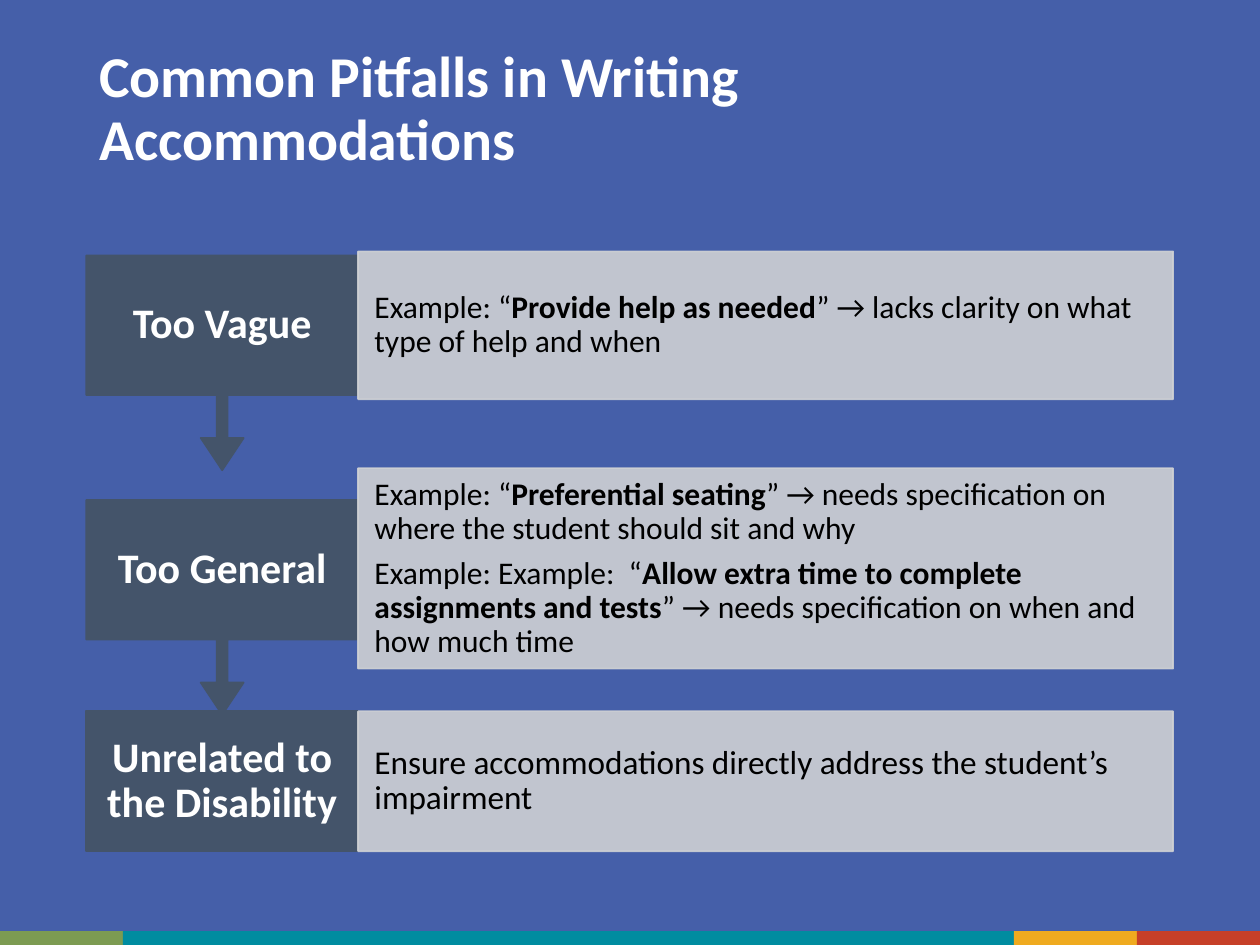
from lxml import etree
from pptx import Presentation
from pptx.dml.color import RGBColor
from pptx.enum.shapes import MSO_SHAPE as Kind
from pptx.enum.text import MSO_ANCHOR as Anchor, PP_ALIGN as Align
from pptx.oxml.ns import qn
from pptx.util import Cm, Pt

WHITE, BLACK, SLATE, GREY = "FFFFFF", "000000", "44546A", "CFD1D4"


def paint(fill, color, alpha=None):
    fill.solid()
    fill.fore_color.rgb = RGBColor.from_string(color)
    if alpha:
        for node in fill._xPr.iter(qn("a:srgbClr")):
            etree.SubElement(node, qn("a:alpha"), val=str(alpha * 1000))


def write(shape, paras, size=18, color=BLACK, bold=False, align=Align.LEFT,
          anchor=Anchor.MIDDLE, side=0.33, top=0):
    """Fill a shape with paragraphs; text between * marks is bold."""
    frame = shape.text_frame
    frame.word_wrap = True
    frame.vertical_anchor = anchor
    frame.margin_left = frame.margin_right = Cm(side)
    frame.margin_top = frame.margin_bottom = Cm(top)
    for i, text in enumerate(paras):
        para = frame.add_paragraph() if i else frame.paragraphs[0]
        para.alignment = align
        para.line_spacing = 0.9
        para.space_after = Pt(6.3)
        for j, part in enumerate(text.split("*")):
            if not part:
                continue
            run = para.add_run()
            run.text = part
            font = run.font
            font.name, font.size = "Calibri", Pt(size)
            font.bold = bold or j % 2 == 1
            font.color.rgb = RGBColor.from_string(color)


deck = Presentation()
deck.slide_width, deck.slide_height = Cm(25.4), Cm(19.05)
slide = deck.slides.add_slide(deck.slide_layouts[6])
paint(slide.background.fill, "455FA9")
shapes = slide.shapes

# Colour strip along the foot
left = 0
for width, color in [(2.48, "7C9B52"), (17.96, "008CA0"),
                     (2.48, "EFAA1F"), (2.48, "C63F28")]:
    bar = shapes.add_shape(Kind.RECTANGLE, Cm(left), Cm(18.77), Cm(width), Cm(0.28))
    bar.shadow.inherit = False
    paint(bar.fill, color)
    bar.line.fill.background()
    left += width

# Title
title = shapes.add_textbox(Cm(1.75), Cm(0.97), Cm(21.9), Cm(3.68))
write(title, ["Common Pitfalls in Writing Accommodations"], size=33, color=WHITE,
      bold=True, anchor=Anchor.TOP, side=0.25)

# Steps: label, its top, card top, card height, text size, card text
STEPS = [
    ("Too Vague", 5.15, 5.07, 2.98, 18,
     ["Example: “*Provide help as needed*” → lacks clarity on what type of help and when"]),
    ("Too General", 10.08, 9.44, 4.04, 18,
     ["Example: “*Preferential seating*” → needs specification on where the "
      "student should sit and why",
      "Example: Example:  “*Allow extra time to complete assignments and tests*” "
      "→ needs specification on when and how much time"]),
    ("Unrelated to the Disability", 14.34, 14.34, 2.82, 19,
     ["Ensure accommodations directly address the student’s impairment"]),
]

for step, (label, top, y, high, size, paras) in enumerate(STEPS):
    # Label box, with an arrow down to the next step
    last = step == len(STEPS) - 1
    kind, tall = (Kind.RECTANGLE, 2.82) if last else (Kind.DOWN_ARROW_CALLOUT, 4.33)
    box = shapes.add_shape(kind, Cm(1.74), Cm(top), Cm(5.48), Cm(tall))
    if not last:
        for i, value in enumerate([0.05, 0.1, 0.15, 0.65]):
            box.adjustments[i] = value
    # Card with the example
    card = shapes.add_shape(Kind.RECTANGLE, Cm(7.22), Cm(y), Cm(16.43), Cm(high))
    for shape, color, alpha in [(box, SLATE, None), (card, GREY, 90)]:
        shape.shadow.inherit = False
        paint(shape.fill, color, alpha)
        paint(shape.line.fill, color, alpha)
        shape.line.width = Pt(1)
    write(box, [label], size=24, color=WHITE, bold=True, align=Align.CENTER, side=0.38)
    write(card, paras, size=size)

deck.save("out.pptx")
